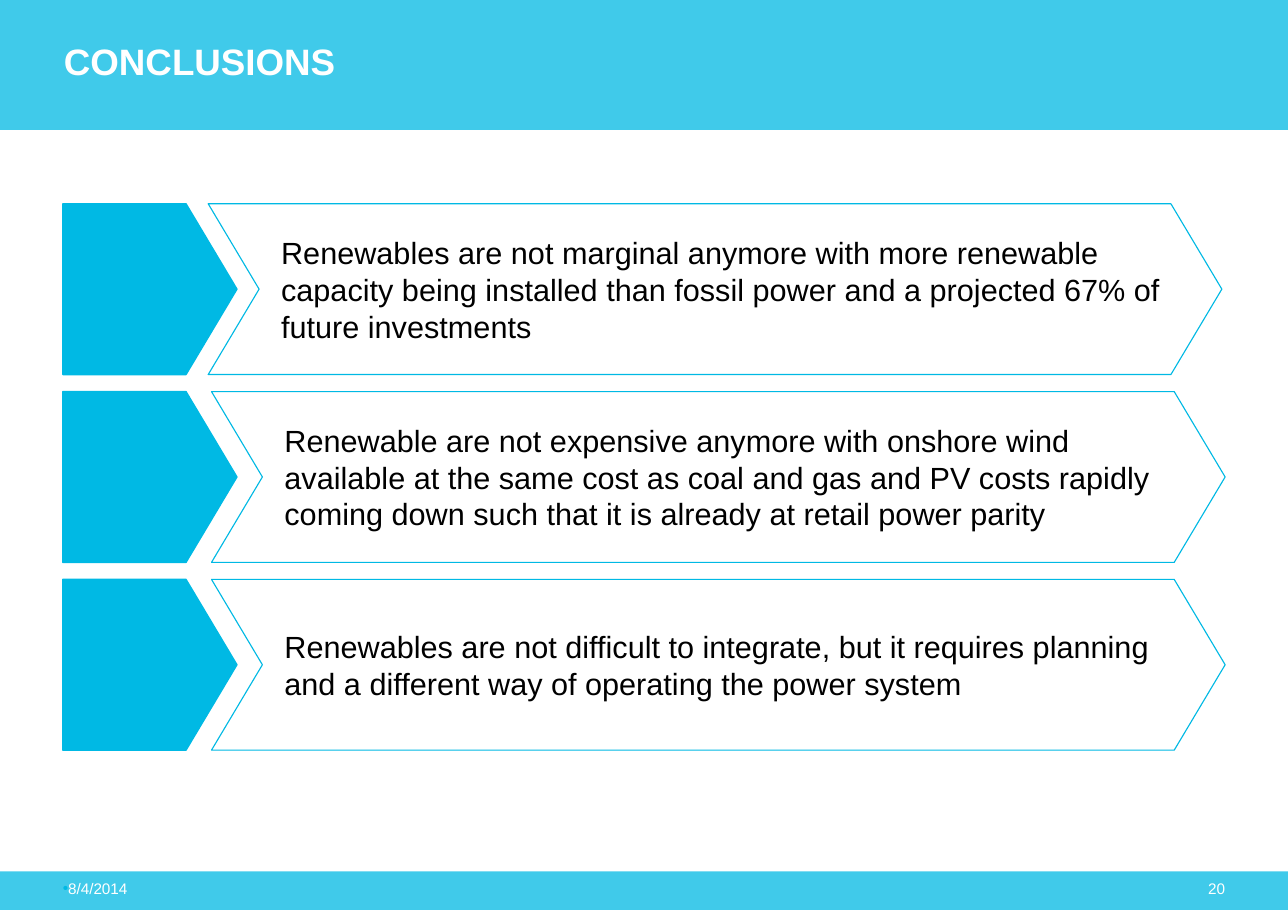
from lxml.etree import SubElement
from pptx import Presentation
from pptx.dml.color import RGBColor
from pptx.enum.shapes import MSO_SHAPE
from pptx.enum.text import MSO_ANCHOR, PP_ALIGN
from pptx.oxml.ns import qn
from pptx.util import Inches, Pt

TITLE = "CONCLUSIONS"
DATE = "8/4/2014"
PAGE = "20"
# text, left edge of its chevron
POINTS = [
    ("Renewables are not marginal anymore with more renewable capacity being "
     "installed than fossil power and a projected 67% of future investments", 1.89),
    ("Renewable are not expensive anymore with onshore wind available at the "
     "same cost as coal and gas and PV costs rapidly coming down such that it "
     "is already at retail power parity", 1.92),
    ("Renewables are not difficult to integrate, but it requires planning and "
     "a different way of operating the power system", 1.92),
]
COLORS = {"cyan": "00B9E4", "white": "FFFFFF", "black": "000000"}
FONT = "Arial"
WIDTH, HEIGHT = 11.69, 8.27
FIRST, LAST = 1.85, 5.26
TALL = 1.55
POINT = 0.298


def color(name):
    return RGBColor.from_string(COLORS[name])


def write(shape, text, size, ink, anchor=MSO_ANCHOR.TOP, insets=(0, 0, 0, 0)):
    frame = shape.text_frame
    frame.text = text
    frame.word_wrap = True
    frame.vertical_anchor = anchor
    (frame.margin_left, frame.margin_top,
     frame.margin_right, frame.margin_bottom) = map(Inches, insets)
    para = frame.paragraphs[0]
    para.alignment = PP_ALIGN.LEFT
    font = para.runs[0].font
    font.name, font.size = FONT, Pt(size)
    font.color.rgb = color(ink)
    return para


def label(box, *style):
    return write(slide.shapes.add_textbox(*map(Inches, box)), *style)


def draw(kind, box, fill, line=None):
    """Add a flat shape; line is the outline width in points."""
    shape = slide.shapes.add_shape(kind, *map(Inches, box))
    shape.shadow.inherit = False
    shape.fill.solid()
    shape.fill.fore_color.rgb = color(fill)
    if line:
        shape.line.color.rgb = color("cyan")
        shape.line.width = Pt(line)
    else:
        shape.line.fill.background()
    return shape


def band(top, height):
    """Add a full-width cyan band at 75% opacity."""
    shape = draw(MSO_SHAPE.RECTANGLE, (0, top, WIDTH, height), "cyan")
    tint = shape.fill._xPr.find(".//" + qn("a:srgbClr"))
    SubElement(tint, qn("a:alpha"), val="75000")


def bullet(para):
    props = para._p.get_or_add_pPr()
    tint = SubElement(props, qn("a:buClr"))
    SubElement(tint, qn("a:srgbClr"), val=COLORS["cyan"])
    SubElement(props, qn("a:buFont"), typeface=FONT)
    SubElement(props, qn("a:buChar"), char="•")


deck = Presentation()
deck.slide_width, deck.slide_height = Inches(WIDTH), Inches(HEIGHT)
slide = deck.slides.add_slide(deck.slide_layouts[6])

band(7.91, 0.35)
band(0, 1.18)

page = label((10.49, 7.98, 0.63, 0.17), PAGE, 10, "white")
page.alignment = PP_ALIGN.RIGHT
title = label((0.58, 0.12, 8.65, 0.91), TITLE, 24, "white", MSO_ANCHOR.MIDDLE)
title.line_spacing = 0.9
title.runs[0].font.bold = True

step = (LAST - FIRST) / (len(POINTS) - 1)
for row, (text, left) in enumerate(POINTS):
    top = FIRST + row * step
    tag = draw(MSO_SHAPE.PENTAGON, (0.57, top, 1.58, TALL), "cyan", 1)
    arrow = draw(MSO_SHAPE.CHEVRON, (left, top, 9.2, TALL), "white", 0.75)
    for shape in (tag, arrow):
        shape.adjustments[0] = POINT
    write(arrow, text, 20, "black", MSO_ANCHOR.MIDDLE, (0.2, 0.06, 0.06, 0.06))

bullet(label((0.57, 7.98, 5.12, 0.17), DATE, 10, "white"))

deck.save("out.pptx")
